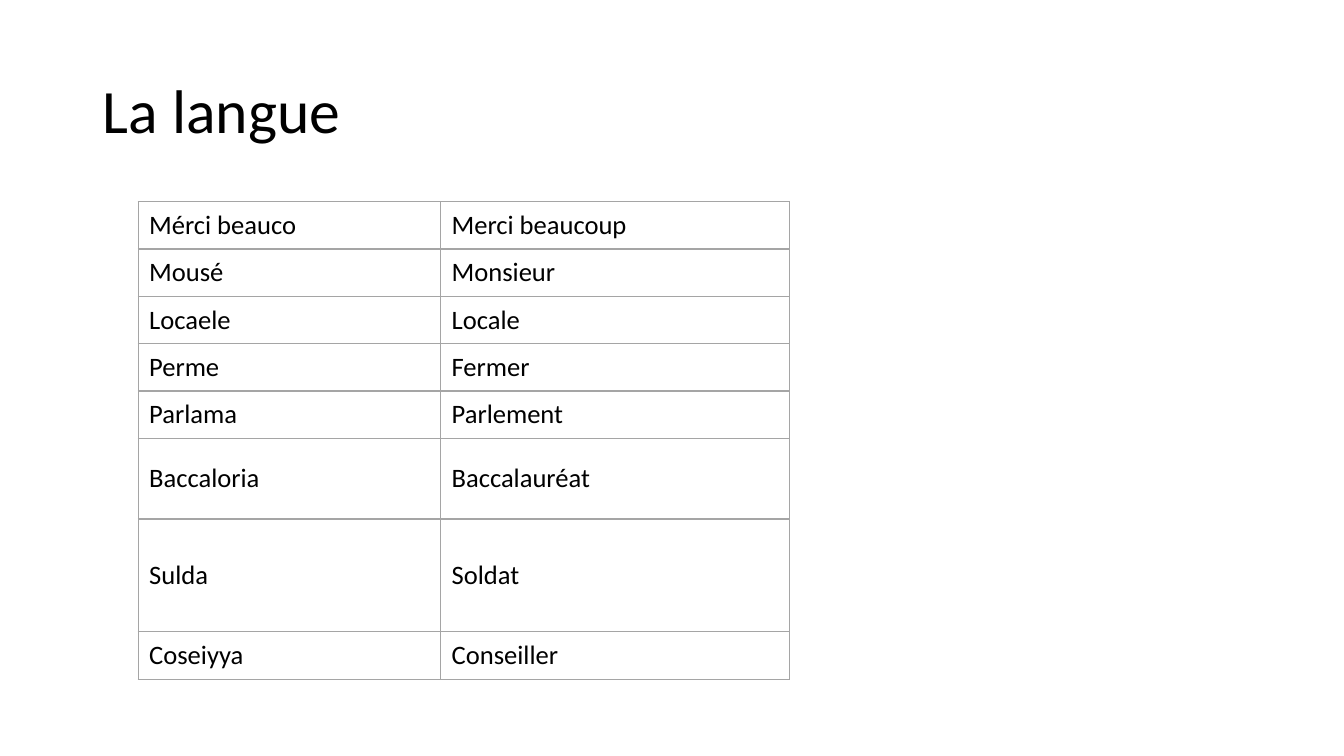
import pptx
import pptx.dml.color
import pptx.enum.text
import pptx.oxml
import pptx.oxml.ns
import pptx.util
from pptx.util import Inches

FONT = "Calibri"
COLORS = {"text": "000000", "background": "FFFFFF", "border": "A5A5A5"}
TITLE_ONLY_LAYOUT = 5
COLUMN_WIDTHS = [3, 3.46]
ROW_HEIGHT = 0.47
TALL_ROWS = {"Baccaloria": 0.8, "Sulda": 1.12}
WORDS = [
    ("Mérci beauco", "Merci beaucoup"),
    ("Mousé", "Monsieur"),
    ("Locaele", "Locale"),
    ("Perme", "Fermer"),
    ("Parlama", "Parlement"),
    ("Baccaloria", "Baccalauréat"),
    ("Sulda", "Soldat"),
    ("Coseiyya", "Conseiller"),
]


def color(name):
    return pptx.dml.color.RGBColor.from_string(COLORS[name])


def add_run(paragraph, text, size):
    run = paragraph.add_run()
    run.text = text
    run.font.name = FONT
    run.font.size = pptx.util.Pt(size)
    run.font.color.rgb = color("text")


def set_title(slide, text):
    title = slide.shapes.title
    title.left, title.top = Inches(0.92), Inches(0.4)
    title.width, title.height = Inches(11.5), Inches(1.45)
    title.text_frame.vertical_anchor = pptx.enum.text.MSO_ANCHOR.MIDDLE
    paragraph = title.text_frame.paragraphs[0]
    paragraph.alignment = pptx.enum.text.PP_ALIGN.LEFT
    paragraph.line_spacing = 0.9
    add_run(paragraph, text, 44)


def set_borders(cell):
    properties = cell._tc.get_or_add_tcPr()
    for position, side in enumerate(("lnL", "lnR", "lnT", "lnB")):
        border = pptx.oxml.parse_xml(
            f'<a:{side} {pptx.oxml.ns.nsdecls("a")} w="{pptx.util.Pt(1)}">'
            f'<a:solidFill><a:srgbClr val="{COLORS["border"]}"/></a:solidFill>'
            f'</a:{side}>'
        )
        properties.insert(position, border)


def fill_cell(cell, text):
    cell.fill.background()
    cell.vertical_anchor = pptx.enum.text.MSO_ANCHOR.MIDDLE
    cell.margin_left = cell.margin_right = Inches(0.11)
    cell.margin_top = cell.margin_bottom = Inches(0.05)
    add_run(cell.text_frame.paragraphs[0], text, 19)
    set_borders(cell)


def add_word_table(slide):
    heights = [TALL_ROWS.get(spoken, ROW_HEIGHT) for spoken, _ in WORDS]
    table = slide.shapes.add_table(
        len(WORDS), len(COLUMN_WIDTHS), Inches(1.37), Inches(2),
        Inches(sum(COLUMN_WIDTHS)), Inches(sum(heights)),
    ).table
    table.first_row = False
    table.horz_banding = False
    for column, width in zip(table.columns, COLUMN_WIDTHS):
        column.width = Inches(width)
    for row, height, words in zip(table.rows, heights, WORDS):
        row.height = Inches(height)
        for cell, word in zip(row.cells, words):
            fill_cell(cell, word)


def main():
    presentation = pptx.Presentation()
    presentation.slide_width = Inches(13.33)
    presentation.slide_height = Inches(7.5)
    layout = presentation.slide_layouts[TITLE_ONLY_LAYOUT]
    slide = presentation.slides.add_slide(layout)
    slide.background.fill.solid()
    slide.background.fill.fore_color.rgb = color("background")
    set_title(slide, "La langue")
    add_word_table(slide)
    presentation.save("out.pptx")


if __name__ == "__main__":
    main()
